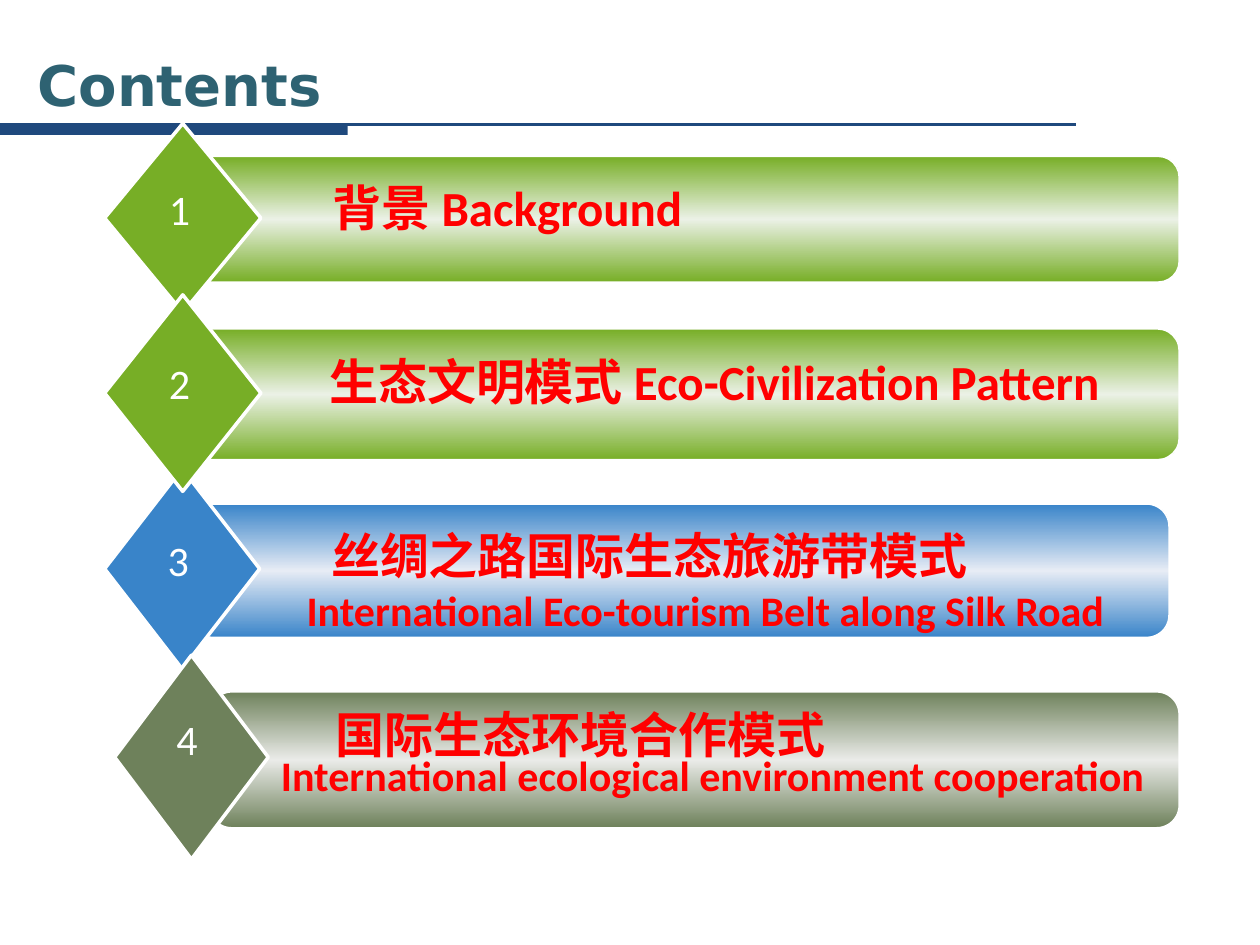
from copy import deepcopy
from dataclasses import dataclass

from pptx import Presentation
from pptx import util as u
from pptx.dml import color
from pptx.enum import shapes, text
from pptx.oxml import ns


@dataclass(frozen=True)
class Theme:
    navy: str = "1F497D"
    teal: str = "2E6272"
    red: str = "FF0000"
    white: str = "FFFFFF"
    green: tuple = ("77AE26", "EBF1E6")
    blue: tuple = ("3984C9", "E7ECF5")
    olive: tuple = ("6E815B", "EAEBE8")
    body_font: str = "Calibri"
    title_font: str = "DejaVu Sans"
    title: int = 32
    heading: int = 28
    detail: int = 24


def rgb(value):
    return color.RGBColor.from_string(value)


class ContentsSlide:
    """Draw styled elements on one slide, with all lengths in points."""

    def __init__(self, page, theme):
        self.page = page
        self.theme = theme

    def shape(self, kind, frame, fill, outline=0):
        shape = self.page.shapes.add_shape(kind, *map(u.Pt, frame))
        shape.shadow.inherit = False
        shape.fill.solid()
        shape.fill.fore_color.rgb = rgb(fill)
        if outline:
            shape.line.color.rgb = rgb(self.theme.white)
            shape.line.width = u.Pt(outline)
        else:
            shape.line.fill.background()
        return shape

    def bar(self, frame, tones):
        edge, middle = tones
        bar = self.shape(shapes.MSO_SHAPE.ROUNDED_RECTANGLE, frame, edge, 1)
        bar.adjustments[0] = 0.167
        bar.fill.gradient()
        bar.fill.gradient_angle = 270
        stops = bar.fill.gradient_stops
        first = stops[0]._gs
        first.addnext(deepcopy(first))
        for stop, place, tone in zip(bar.fill.gradient_stops, (0, 0.5, 1), (edge, middle, edge)):
            stop.position = place
            stop.color.rgb = rgb(tone)

    def rule(self, start, end):
        rule = self.page.shapes.add_connector(
            shapes.MSO_CONNECTOR.STRAIGHT, *map(u.Pt, start + end))
        rule.line.color.rgb = rgb(self.theme.navy)
        rule.line.width = u.Pt(1.5)
        rule._element.spPr.append(rule._element.makeelement(ns.qn("a:effectLst"), {}))

    def text(self, frame, lines, tone, bold=True, font=None, wrap=True, spacing=None, middle=False):
        """Write lines of (wording, size, indent); an indent of None centres the line."""
        box = self.page.shapes.add_textbox(*map(u.Pt, frame)).text_frame
        box.word_wrap = wrap
        if middle:
            box.vertical_anchor = text.MSO_ANCHOR.MIDDLE
        for index, (wording, size, indent) in enumerate(lines):
            para = box.add_paragraph() if index else box.paragraphs[0]
            para.text = wording
            if indent is None:
                para.alignment = text.PP_ALIGN.CENTER
            elif indent:
                para._p.get_or_add_pPr().set("marL", str(u.Pt(indent)))
            if spacing:
                para.line_spacing = u.Pt(spacing)
            para.font.name = font or self.theme.body_font
            para.font.size = u.Pt(size)
            para.font.bold = bold
            para.font.color.rgb = rgb(tone)

    def entry(self, number, tones, bar, diamond, label, lines, number_at, spacing=None):
        self.bar(bar, tones)
        self.shape(shapes.MSO_SHAPE.DIAMOND, diamond, tones[0], 2)
        self.text(label, lines, self.theme.red, spacing=spacing)
        self.text(number_at + (26.6, 36), [(number, self.theme.detail, None)],
                  self.theme.white, bold=False, wrap=False)


def main():
    theme = Theme()
    deck = Presentation()
    deck.slide_width, deck.slide_height = u.Pt(720), u.Pt(540)
    slide = ContentsSlide(deck.slides.add_slide(deck.slide_layouts[6]), theme)
    big, small = theme.heading, theme.detail

    slide.rule((0, 71.3), (614.9, 71.3))
    slide.shape(shapes.MSO_SHAPE.RECTANGLE, (0, 71.3, 198.7, 5.8), theme.navy)
    slide.text((14.4, 25.9, 606.2, 44.6), [("Contents", theme.title, 0)], theme.teal,
               font=theme.title_font, middle=True)

    slide.entry("1", theme.green, (108.7, 89.3, 565.2, 72), (59.8, 70.6, 89.3, 108),
                (139, 97.9, 544.3, 74.9), [("背景 Background", big, 44)], (89.3, 101.5))
    slide.entry("3", theme.blue, (108.7, 288, 559.4, 76.3), (59.8, 267.8, 88.6, 114.5),
                (138.2, 296.6, 529.9, 92.2),
                [("丝绸之路国际生态旅游带模式", big, 44),
                 ("International Eco-tourism Belt along Silk Road", small, None)],
                (88.6, 301.7))
    slide.entry("4", theme.olive, (119.5, 395.3, 554.4, 77.8), (65.5, 374.4, 87.8, 116.6),
                (153.4, 411.8, 524.2, 51.1),
                [("国际生态环境合作模式", big, 31.5),
                 ("International ecological environment cooperation", small, 0)],
                (93.6, 403.9), spacing=21)
    slide.entry("2", theme.green, (108.7, 187.9, 565.2, 74.9), (59.8, 168.5, 89.3, 112.3),
                (136, 197.3, 544.3, 46),
                [("生态文明模式 Eco-Civilization Pattern", big, None)], (89.3, 200.9))

    deck.save("out.pptx")


if __name__ == "__main__":
    main()
